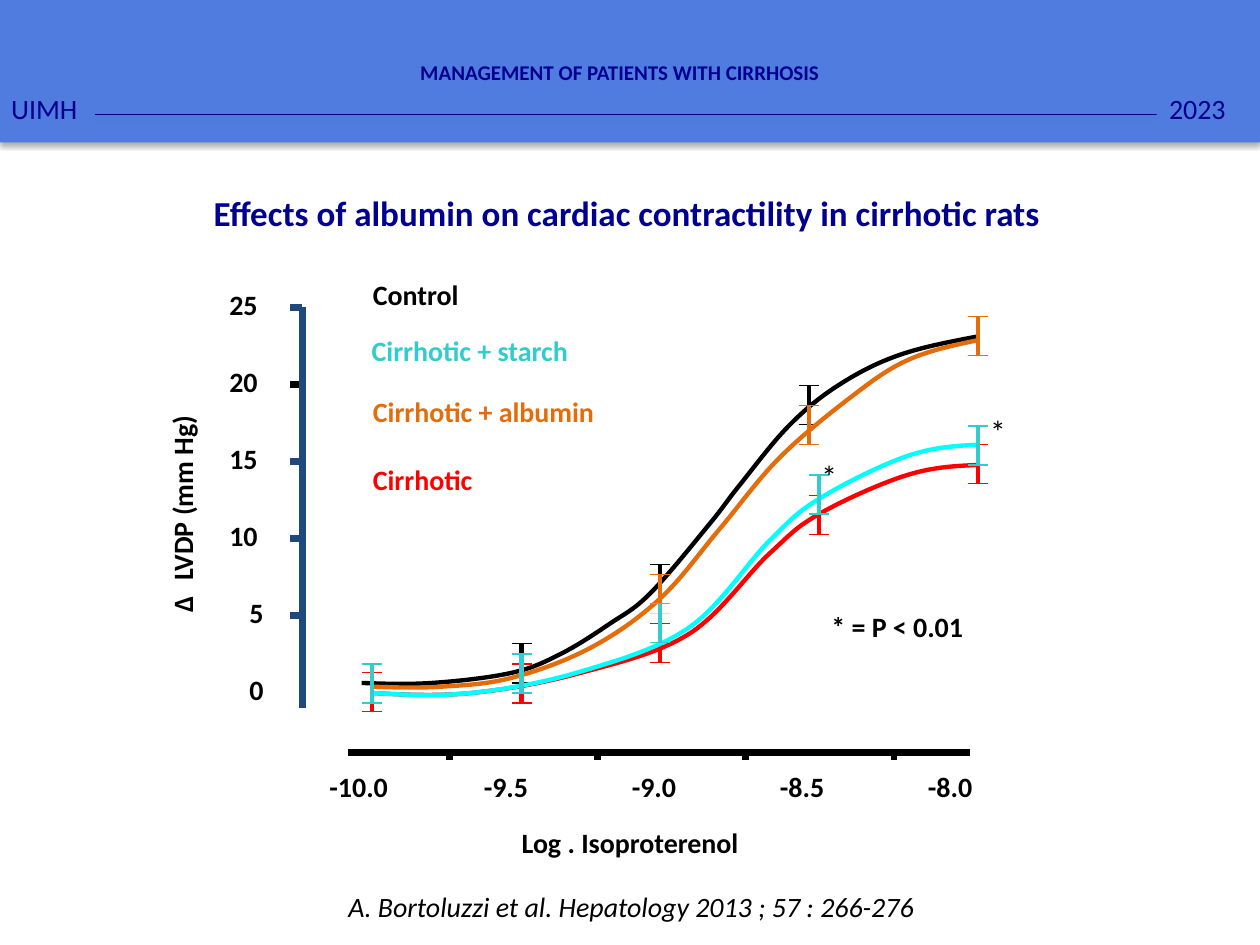
"""Build the slide on albumin and cardiac contractility in cirrhotic rats."""
from dataclasses import dataclass

from lxml import etree
from pptx import Presentation
from pptx.dml.color import RGBColor
from pptx.enum.shapes import MSO_CONNECTOR, MSO_SHAPE
from pptx.enum.text import MSO_ANCHOR, MSO_AUTO_SIZE, PP_ALIGN
from pptx.oxml.ns import qn
from pptx.util import Inches, Pt

STRAIGHT, RECT = MSO_CONNECTOR.STRAIGHT, MSO_SHAPE.RECTANGLE
LEFT, CENTER = PP_ALIGN.LEFT, PP_ALIGN.CENTER
TOP, MIDDLE, BOTTOM = MSO_ANCHOR.TOP, MSO_ANCHOR.MIDDLE, MSO_ANCHOR.BOTTOM
FIT, FIXED = MSO_AUTO_SIZE.SHAPE_TO_FIT_TEXT, MSO_AUTO_SIZE.NONE

BLACK = RGBColor(0x00, 0x00, 0x00)
WHITE = RGBColor(0xFF, 0xFF, 0xFF)
RED = RGBColor(0xFF, 0x00, 0x00)
ORANGE = RGBColor(0xE4, 0x6C, 0x0A)
YELLOW = RGBColor(0xFF, 0xFF, 0x00)
CYAN = RGBColor(0x00, 0xFF, 0xFF)
TEAL = RGBColor(0x33, 0xCC, 0xCC)
NAVY = RGBColor(0x00, 0x00, 0x90)
AXIS_BLUE = RGBColor(0x1F, 0x49, 0x7D)
BAND_BLUE = RGBColor(0x50, 0x7C, 0xDF)

FONT = "Calibri"
AXIS_WIDTH, CURVE_WIDTH, CAP_WIDTH = 3.88, 2.5, 0.75
BAR_HEIGHT, CAP_HALF = 0.31, 0.08

Point = tuple[float, float]


@dataclass
class Label:
    text: str
    x: float
    y: float
    w: float
    h: float = 0.27
    color: RGBColor = BLACK
    size: int = 16
    bold: bool = True
    italic: bool = False
    align: PP_ALIGN = LEFT
    anchor: MSO_ANCHOR = TOP
    rotation: int = 0
    wrap: bool = False
    inset: Point = (0, 0)


@dataclass
class Series:
    color: RGBColor
    bars: list[Point]


PADDED = {"wrap": True, "inset": (0.1, 0.05)}
HEADER = {"color": NAVY, "wrap": True}

CONTROL = Series(BLACK, [(7.76, 2.51), (6.42, 3.06), (5.24, 4.48), (4.14, 5.11), (2.95, 5.27)])
CIRRHOTIC = Series(RED, [(7.76, 3.53), (6.5, 3.93), (5.24, 4.95), (4.14, 5.27), (2.95, 5.34)])
ALBUMIN = Series(ORANGE, [(7.76, 2.51), (6.42, 3.22), (5.24, 4.56)])
STARCH = Series(TEAL, [(7.76, 3.38), (6.5, 3.77), (5.24, 4.79), (4.14, 5.19), (2.95, 5.27)])

CONTROL_CURVE = [(2.87, 5.42), (3.43, 5.42), (4.06, 5.34), (4.45, 5.19), (4.84, 4.95), (5.16, 4.71),
                 (5.63, 4.16), (5.87, 3.85), (6.26, 3.38), (6.65, 3.06), (7.13, 2.82), (7.76, 2.67)]
CIRRHOTIC_CURVE = [(2.95, 5.5), (3.74, 5.5), (4.61, 5.34), (5.47, 5.03), (6.1, 4.4), (6.5, 4.08),
                   (7.2, 3.77), (7.76, 3.69)]
ALBUMIN_CURVE = [(2.95, 5.45), (3.5, 5.45), (4.06, 5.38), (4.69, 5.14), (5.24, 4.75), (5.71, 4.2),
                 (6.18, 3.64), (6.73, 3.17), (7.2, 2.86), (7.76, 2.7)]
STARCH_CURVE = [(2.95, 5.5), (3.74, 5.5), (4.61, 5.33), (5.47, 4.98), (6.1, 4.3), (6.5, 3.96),
                (7.2, 3.62), (7.76, 3.53)]

LABELS = [
    Label("Effects of albumin on cardiac contractility in cirrhotic rats", 1.55, 1.47, 6.85, 0.44,
          NAVY, 20, align=CENTER, anchor=MIDDLE, inset=(0.1, 0.05)),
    Label("Δ", 1.37, 4.65, 0.15, rotation=270),
    Label(" LVDP (mm Hg)", 0.75, 3.83, 1.39, rotation=270),
    Label("Control", 2.96, 2.2, 0.69),
    Label("Cirrhotic + starch", 2.95, 2.65, 1.59, color=TEAL),
    Label("Cirrhotic + albumin", 2.96, 3.13, 1.78, color=ORANGE),
    Label("Cirrhotic", 2.96, 3.67, 0.8, color=RED),
    Label("Log . Isoproterenol", 4.14, 6.55, 1.75),
    Label("* = P < 0.01", 6.5, 4.79, 1.89, 0.37, **PADDED),
    Label("*", 7.76, 3.22, 0.47, 0.4, size=18, bold=False, **PADDED),
    Label("*", 6.42, 3.58, 0.47, 0.4, size=18, bold=False, **PADDED),
    Label("A. Bortoluzzi et al. Hepatology 2013 ; 57 : 266-276", 1.82, 7.01, 6.38, 0.37,
          bold=False, italic=True, align=CENTER, **PADDED),
]
HEADER_LABELS = [
    Label("2023", 9.18, 0.68, 0.82, 0.37, bold=False, inset=(0.1, 0.05), **HEADER),
    Label("MANAGEMENT OF PATIENTS WITH CIRRHOSIS", 0.67, -0.01, 8.5, 0.75, size=12,
          align=CENTER, anchor=BOTTOM, inset=(0.1, 0.07), **HEADER),
    Label("UIMH", -0.01, 0.68, 0.73, 0.37, bold=False, inset=(0.1, 0.05), **HEADER),
]


def add_effects(shape, alpha: int = 0, distance: float = 0) -> None:
    sp_pr = shape._element.spPr
    effects = sp_pr.find(qn("a:effectLst"))
    if effects is None:
        effects = etree.SubElement(sp_pr, qn("a:effectLst"))
    if alpha:
        shadow = etree.SubElement(effects, qn("a:outerShdw"), blurRad=str(Pt(3.1)),
                                  dist=str(Pt(distance)), dir="5400000", rotWithShape="0")
        color = etree.SubElement(shadow, qn("a:srgbClr"), val="000000")
        etree.SubElement(color, qn("a:alpha"), val=str(alpha * 1000))


def add_line(s, start: Point, end: Point, color: RGBColor, width: float,
             alpha: int = 0, distance: float = 0) -> None:
    line = s.shapes.add_connector(STRAIGHT, *map(Inches, start + end))
    line.line.color.rgb = color
    line.line.width = Pt(width)
    add_effects(line, alpha, distance)


def add_rect(s, x: float, y: float, w: float, h: float):
    sp = s.shapes.add_shape(RECT, *map(Inches, (x, y, w, h)))
    sp.shadow.inherit = False
    sp.fill.solid()
    sp.fill.fore_color.rgb = BAND_BLUE
    sp.line.fill.background()
    return sp


def write(sp, label: Label) -> None:
    sp.rotation = label.rotation
    tf = sp.text_frame
    side, edge = map(Inches, label.inset)
    frame_format = {"word_wrap": label.wrap, "vertical_anchor": label.anchor,
                    "margin_left": side, "margin_right": side,
                    "margin_top": edge, "margin_bottom": edge,
                    "auto_size": FIXED if label.anchor == BOTTOM else FIT}
    for name, value in frame_format.items():
        setattr(tf, name, value)
    p = tf.paragraphs[0]
    p.alignment = label.align
    r = p.add_run()
    r.text = label.text
    font_format = {"name": FONT, "size": Pt(label.size), "bold": label.bold, "italic": label.italic}
    for name, value in font_format.items():
        setattr(r.font, name, value)
    r.font.color.rgb = label.color


def add_label(s, label: Label) -> None:
    write(s.shapes.add_textbox(*map(Inches, (label.x, label.y, label.w, label.h))), label)


def bezier_points(nodes: list[Point]) -> list[Point]:
    """Return two handles and an end point for each span of a smooth curve."""
    last = len(nodes) - 1
    points = []
    for i in range(last):
        axes = []
        for k in (0, 1):
            a, d = nodes[i][k], nodes[i + 1][k]
            b = a + (d - nodes[i - 1][k]) / 6 if i else None
            c = d - (nodes[i + 2][k] - a) / 6 if i + 1 < last else (b + d) / 2
            axes.append(((a + c) / 2 if b is None else b, c, d))
        points.extend(zip(*axes))
    return points


def add_curve(s, nodes: list[Point], color: RGBColor) -> None:
    start, *rest = [(Inches(x), Inches(y)) for x, y in [nodes[0], *bezier_points(nodes)]]
    builder = s.shapes.build_freeform(*start)
    builder.add_line_segments(rest, close=False)
    sp = builder.convert_to_shape()
    outline = sp._element.spPr.find(".//" + qn("a:path"))
    segments = outline.findall(qn("a:lnTo"))
    for i in range(0, len(segments), 3):
        bezier = etree.SubElement(outline, qn("a:cubicBezTo"))
        for segment in segments[i:i + 3]:
            bezier.append(segment[0])
            outline.remove(segment)
    sp.shadow.inherit = False
    sp.fill.background()
    sp.line.color.rgb = color
    sp.line.width = Pt(CURVE_WIDTH)


def add_cap(s, x: float, y: float, color: RGBColor) -> None:
    add_line(s, (x - CAP_HALF, y), (x + CAP_HALF, y), color, CAP_WIDTH)


def add_error_bars(s, series: Series) -> None:
    for x, top in series.bars:
        bottom = top + BAR_HEIGHT
        add_line(s, (x, top), (x, bottom), series.color, CURVE_WIDTH)
        add_cap(s, x, top, series.color)
        if (series, x) != (ALBUMIN, 5.24):
            add_cap(s, x, bottom, series.color)


def add_axes(s) -> None:
    add_line(s, (2.76, 5.97), (7.7, 5.97), BLACK, AXIS_WIDTH)
    for i, text in enumerate(("-10.0", "-9.5", "-9.0", "-8.5", "-8.0")):
        width = 0.47 if i == 0 else 0.37
        add_label(s, Label(text, 2.85 + 1.175 * i - width / 2, 6.11, width))
        if i < 4:
            x = 3.57 + 1.175 * i
            add_line(s, (x, 5.97), (x, 6.03), BLACK, AXIS_WIDTH)
    for value in range(0, 26, 5):
        y = 5.5 - 0.1224 * value
        x, width = (1.98, 0.11) if value < 10 else (1.82, 0.23)
        add_label(s, Label(str(value), x, y - 0.16, width))
        color = {0: WHITE, 20: BLACK}.get(value, AXIS_BLUE)
        add_line(s, (2.4 if value else 2.32, y), (2.3, y), color, AXIS_WIDTH)
    add_line(s, (2.4, 5.62), (2.4, 2.44), AXIS_BLUE, AXIS_WIDTH)


def add_header(s) -> None:
    add_effects(add_rect(s, 0, -0.03, 10, 1.16), 35, 1.8)
    add_line(s, (0.75, 0.91), (9.18, 0.91), NAVY, 0.75, 38, 1.6)
    for label in HEADER_LABELS:
        write(add_rect(s, label.x, label.y, label.w, label.h), label)


def main() -> None:
    prs = Presentation()
    prs.slide_width, prs.slide_height = Inches(10), Inches(7.5)
    s = prs.slides.add_slide(prs.slide_layouts[6])
    add_axes(s)
    add_curve(s, CIRRHOTIC_CURVE, RED)
    add_error_bars(s, CONTROL)
    add_error_bars(s, CIRRHOTIC)
    add_curve(s, CONTROL_CURVE, BLACK)
    add_curve(s, ALBUMIN_CURVE, ORANGE)
    add_error_bars(s, ALBUMIN)
    add_cap(s, 5.24, 4.87, YELLOW)
    add_curve(s, STARCH_CURVE, CYAN)
    add_error_bars(s, STARCH)
    for label in LABELS:
        add_label(s, label)
    add_header(s)
    prs.save("out.pptx")


if __name__ == "__main__":
    main()
